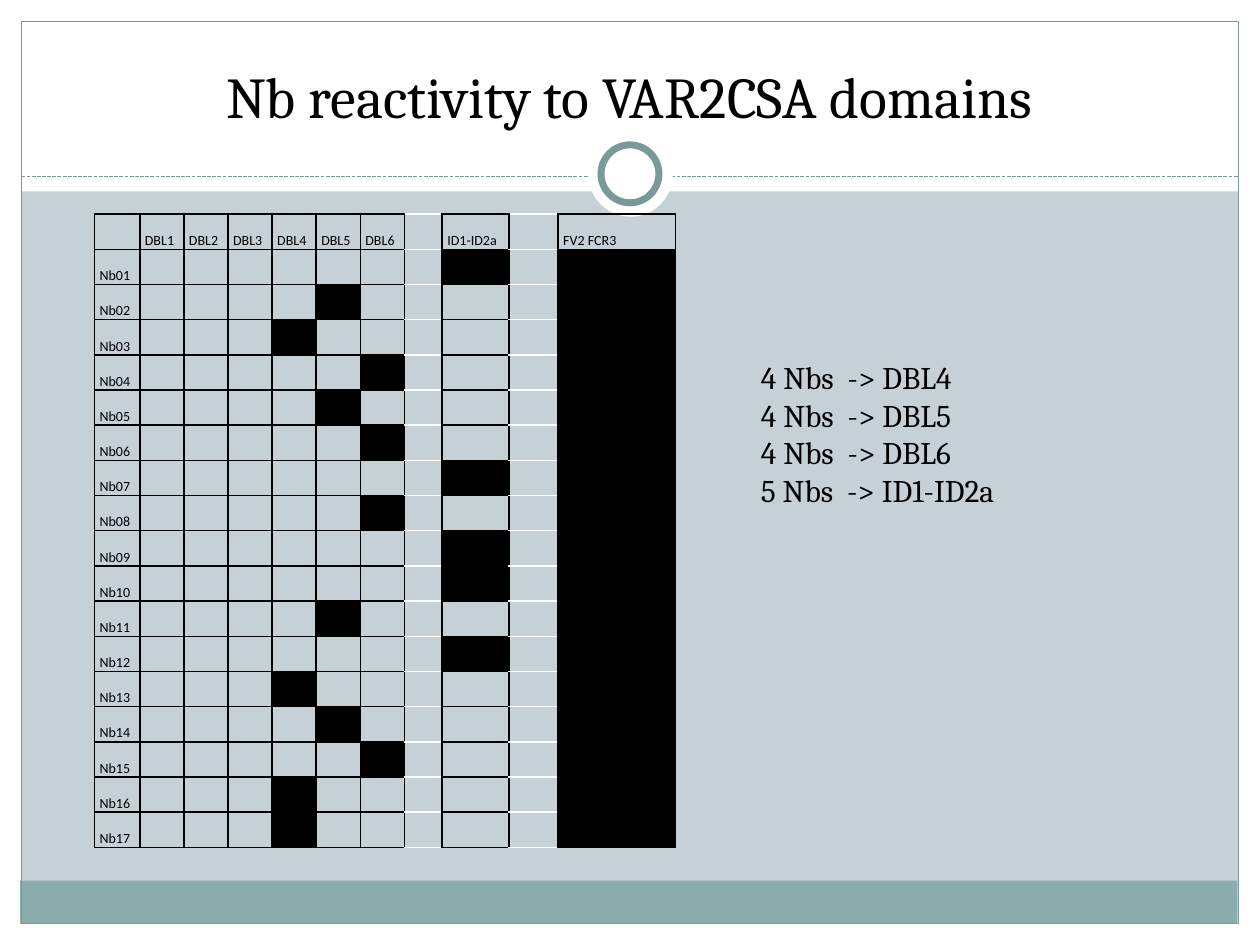
from lxml.etree import SubElement
from pptx import Presentation
from pptx.dml.color import RGBColor
from pptx.enum.dml import MSO_LINE
from pptx.enum.shapes import MSO_CONNECTOR, MSO_SHAPE
from pptx.enum.text import MSO_ANCHOR, PP_ALIGN
from pptx.oxml.ns import qn
from pptx.util import Inches, Pt

WHITE, BLACK, TEAL, SAGE, MIST = "FFFFFF", "000000", "7C999A", "8CADAE", "C5D1D7"
HEADERS = ["", "DBL1", "DBL2", "DBL3", "DBL4", "DBL5", "DBL6", "", "ID1-ID2a", "", "FV2 FCR3"]
WIDTHS = [0.36] + [0.35] * 6 + [0.3, 0.53, 0.39, 0.93]
GAP_COLUMNS = (7, 9)
FULL_LENGTH = "FV2 FCR3"
ROW_HEIGHT = 5.03 / 18
REACTIVITY = [
    "ID1-ID2a", "DBL5", "DBL4", "DBL6", "DBL5", "DBL6", "ID1-ID2a", "DBL6", "ID1-ID2a",
    "ID1-ID2a", "DBL5", "ID1-ID2a", "DBL4", "DBL5", "DBL6", "DBL4", "DBL4",
]
SUMMARY = ["4 Nbs  -> DBL4", "4 Nbs  -> DBL5", "4 Nbs  -> DBL6", "5 Nbs  -> ID1-ID2a"]


def color(value):
    """Turn a hex string into a colour."""
    return RGBColor.from_string(value)


def paint(target, value):
    """Fill a shape, cell or background, or leave it clear."""
    if value:
        target.fill.solid()
        target.fill.fore_color.rgb = color(value)
    else:
        target.fill.background()


def add_panel(page, left, top, width, height, kind=MSO_SHAPE.RECTANGLE, fill=None, line=None, weight=0.75):
    """Add a preset shape with an optional fill and outline."""
    panel = page.shapes.add_shape(kind, Inches(left), Inches(top), Inches(width), Inches(height))
    panel.shadow.inherit = False
    paint(panel, fill)
    if line:
        panel.line.color.rgb = color(line)
        panel.line.width = Pt(weight)
    else:
        panel.line.fill.background()


def add_divider(page, left, right, top):
    """Add the dashed line below the title."""
    divider = page.shapes.add_connector(
        MSO_CONNECTOR.STRAIGHT, Inches(left), Inches(top), Inches(right), Inches(top))
    divider.line.color.rgb = color(TEAL)
    divider.line.width = Pt(0.75)
    divider.line.dash_style = MSO_LINE.SQUARE_DOT
    SubElement(divider._element.spPr, qn("a:effectLst"))


def write(para, text, font="Cambria", size=18, align=None, spacing=None):
    """Write one formatted run into a paragraph."""
    span = para.add_run()
    span.text = text
    span.font.name = font
    span.font.size = Pt(size)
    span.font.color.rgb = color(BLACK)
    para.alignment = align
    para.line_spacing = spacing


def add_text(page, left, top, width, height, lines, anchor=MSO_ANCHOR.TOP, **style):
    """Add a text box with one paragraph per line."""
    box = page.shapes.add_textbox(Inches(left), Inches(top), Inches(width), Inches(height))
    frame = box.text_frame
    frame.word_wrap = True
    frame.vertical_anchor = anchor
    for index, text in enumerate(lines):
        para = frame.add_paragraph() if index else frame.paragraphs[0]
        write(para, text, **style)


def add_borders(cell, sides):
    """Draw one-point black borders on the named sides of a cell."""
    properties = cell._tc.get_or_add_tcPr()
    for side in sides:
        border = SubElement(properties, qn(f"a:ln{side}"), w=str(Pt(1)))
        SubElement(SubElement(border, qn("a:solidFill")), qn("a:srgbClr"), val=BLACK)


def format_cell(cell, text, fill, sides):
    """Set the borders, fill and text of a cell."""
    add_borders(cell, sides)
    paint(cell, fill)
    cell.vertical_anchor = MSO_ANCHOR.BOTTOM
    cell.margin_left = cell.margin_right = Inches(0.04)
    cell.margin_top = cell.margin_bottom = 0
    para = cell.text_frame.paragraphs[0]
    if text:
        write(para, text, font="Calibri", size=8, align=PP_ALIGN.JUSTIFY, spacing=2.0)
    else:
        SubElement(para._p, qn("a:endParaRPr"), sz="800")


def add_reactivity_table(page):
    """Add the grid of nanobodies against domains."""
    row_count = len(REACTIVITY) + 1
    table = page.shapes.add_table(
        row_count, len(HEADERS), Inches(0.75), Inches(1.7),
        Inches(sum(WIDTHS)), Inches(ROW_HEIGHT * row_count)).table
    table.first_row = table.horz_banding = False
    for column, width in zip(table.columns, WIDTHS):
        column.width = Inches(width)
    for row_index, row in enumerate(table.rows):
        row.height = Inches(ROW_HEIGHT)
        hits = (REACTIVITY[row_index - 1], FULL_LENGTH) if row_index else ()
        labels = [f"Nb{row_index:02}"] + [""] * (len(HEADERS) - 1) if row_index else HEADERS
        for column_index, (header, label) in enumerate(zip(HEADERS, labels)):
            sides = "LR" if column_index in GAP_COLUMNS else "LRTB"
            fill = BLACK if header in hits else None
            format_cell(table.cell(row_index, column_index), label, fill, sides)


def add_frame(page):
    """Add the white margins, the footer band, the outline and the ring."""
    margins = [(0, 7.33, 10, 0.17), (0, 0, 10, 1.52), (0, 0, 0.17, 7.5), (9.83, 0, 0.17, 7.5)]
    for margin in margins:
        add_panel(page, *margin, fill=WHITE)
    add_panel(page, 0.16, 6.99, 9.66, 0.34, fill=SAGE)
    add_panel(page, 0.17, 0.17, 9.66, 7.16, line=TEAL)
    add_divider(page, 0.17, 9.83, 1.4)
    add_panel(page, 4.67, 1.05, 0.67, 0.67, MSO_SHAPE.OVAL, fill=WHITE)
    add_panel(page, 4.77, 1.15, 0.46, 0.46, MSO_SHAPE.OVAL, fill=WHITE, line=TEAL, weight=4)


def main():
    """Build and save the slide."""
    deck = Presentation()
    deck.slide_width, deck.slide_height = Inches(10), Inches(7.5)
    page = deck.slides.add_slide(deck.slide_layouts[6])
    paint(page.background, MIST)
    add_frame(page)
    add_text(page, 0.33, 0.25, 9.33, 0.83, ["Nb reactivity to VAR2CSA domains"],
             anchor=MSO_ANCHOR.BOTTOM, size=33, align=PP_ALIGN.CENTER)
    add_reactivity_table(page)
    add_text(page, 5.94, 2.79, 2.68, 1.31, SUMMARY)
    deck.save("out.pptx")


if __name__ == "__main__":
    main()
